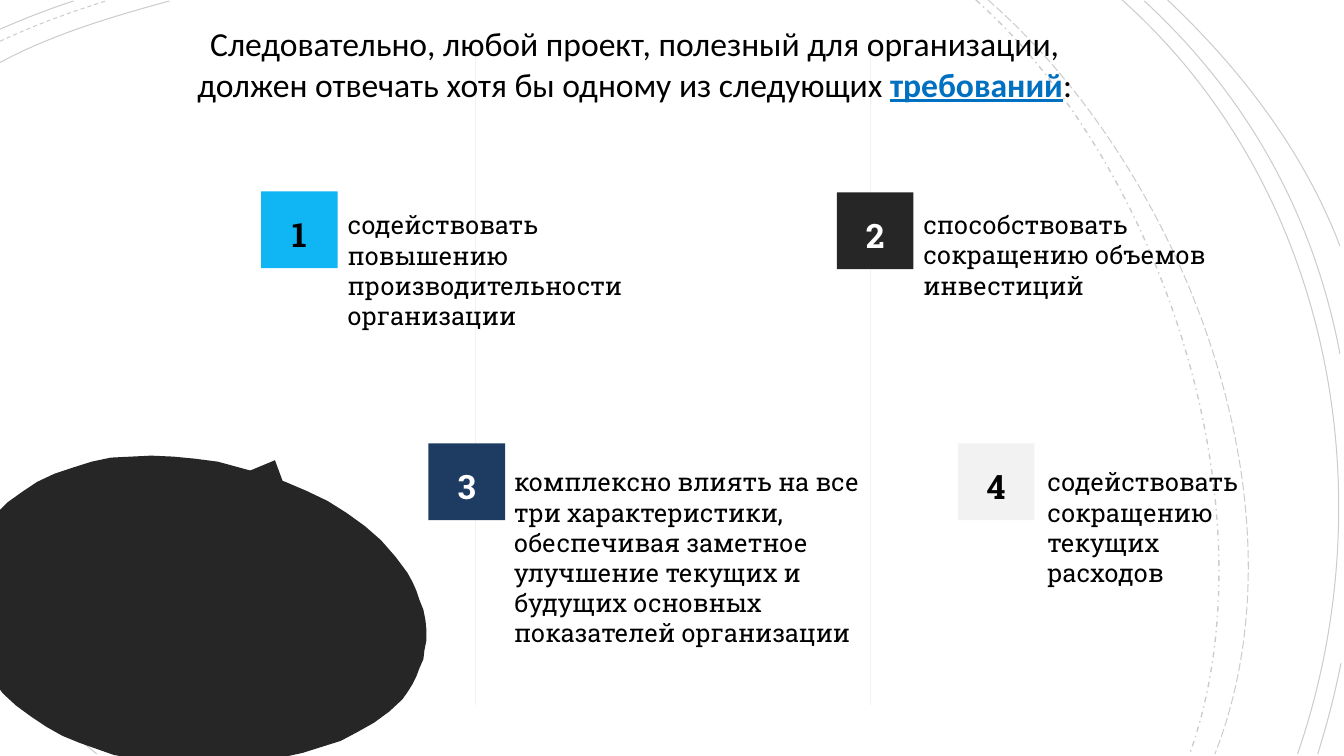
from pptx import Presentation
from pptx.dml.color import RGBColor
from pptx.enum.dml import MSO_LINE
from pptx.enum.shapes import MSO_CONNECTOR, MSO_SHAPE
from pptx.enum.text import MSO_ANCHOR, PP_ALIGN
from pptx.oxml.ns import qn
from pptx.util import Inches, Pt
from lxml.etree import SubElement

BLACK = RGBColor(0x00, 0x00, 0x00)
WHITE = RGBColor(0xFF, 0xFF, 0xFF)
DARK = RGBColor(0x26, 0x26, 0x26)
SKY = RGBColor(0x10, 0xB6, 0xF4)
NAVY = RGBColor(0x1E, 0x3C, 0x62)
PALE = RGBColor(0xF2, 0xF2, 0xF2)
BLUE = RGBColor(0x00, 0x70, 0xC0)

SLAB = "Roboto Slab"
SOLID, DASH = MSO_LINE.SOLID, MSO_LINE.DASH
SIDE = 0.76

ARCS = [
    ((0, 0.62), (0.52, 0.34), (1.13, 0.16), (1.68, 0.01), SOLID, 0.75),
    ((2.1, 7.48), (1.34, 6.9), (0.62, 6.22), (0, 5.48), SOLID, 0.75),
    ((0, 0.41), (0.34, 0.25), (0.7, 0.12), (1.05, 0.01), DASH, 0.75),
    ((1.83, 7.49), (1.18, 6.98), (0.56, 6.4), (0.01, 5.77), DASH, 0.75),
    ((0, 0.29), (0.23, 0.19), (0.48, 0.09), (0.73, 0.01), SOLID, 0.75),
    ((1.67, 7.48), (1.08, 7.01), (0.51, 6.48), (0, 5.91), SOLID, 0.75),
    ((1.49, 7.48), (0.97, 7.04), (0.46, 6.55), (0, 6.03), SOLID, 0.75),
    ((1.3, 7.48), (0.84, 7.09), (0.41, 6.67), (0, 6.23), SOLID, 0.75),
    ((0.96, 7.48), (0.63, 7.21), (0.31, 6.92), (0, 6.62), SOLID, 0.75),
    ((9.68, 0), (11.54, 1.66), (12.65, 5.09), (11.8, 7.48), MSO_LINE.DASH_DOT, 1),
    ((9.8, 0), (11.73, 1.69), (13.02, 4.99), (12.05, 7.48), MSO_LINE.LONG_DASH, 0.75),
    ((11.13, 0), (13.2, 1.85), (13.76, 4.9), (12.87, 7.48), SOLID, 0.75),
    ((11.35, 0.01), (12.38, 0.96), (13.03, 2.14), (13.29, 3.51), SOLID, 0.75),
    ((13.3, 6.58), (13.24, 6.89), (13.16, 7.19), (13.07, 7.48), SOLID, 0.75),
    ((11.58, 0), (12.31, 0.69), (12.93, 1.5), (13.29, 2.44), SOLID, 0.75),
]

BUBBLE = [
    (1.5, 4.52), (1.72, 4.53), (1.93, 4.55), (2.16, 4.58), (2.38, 4.64), (2.6, 4.7),
    (2.83, 4.78), (3.04, 4.87), (3.25, 4.97), (3.44, 5.09), (3.62, 5.22), (3.78, 5.36),
    (3.92, 5.52), (3.98, 5.6), (4.04, 5.68), (4.09, 5.77), (4.13, 5.86), (4.16, 5.95),
    (4.2, 6.05), (4.22, 6.15), (4.23, 6.25), (4.23, 6.35), (4.21, 6.45), (4.2, 6.54),
    (4.16, 6.63), (4.13, 6.71), (4.09, 6.79), (4.04, 6.87), (3.99, 6.94), (3.86, 7.06),
    (3.71, 7.17), (3.55, 7.26), (3.38, 7.35), (3.19, 7.41), (3, 7.47), (2.86, 7.5),
    (1.19, 7.5), (1.13, 7.49), (0.96, 7.43), (0.79, 7.37), (0.62, 7.3), (0.46, 7.21),
    (0.31, 7.11), (0.16, 7), (0.03, 6.88), (0, 6.84), (0, 5.06), (0.08, 4.98),
    (0.22, 4.88), (0.37, 4.78), (0.54, 4.7), (0.72, 4.64), (0.91, 4.58), (1.1, 4.54),
    (1.3, 4.53),
]

ITEMS = [
    (2.59, 1.9, SKY, BLACK, (3.35, 2.03, 3.74, 1.25),
     "содействовать повышению производительности организации"),
    (8.3, 1.91, DARK, WHITE, (9.06, 2.03, 3.74, 0.93),
     "способствовать сокращению объемов инвестиций"),
    (4.25, 4.4, NAVY, WHITE, (5, 4.58, 3.94, 0.5),
     "комплексно влиять на все три характеристики, обеспечивая заметное "
     "улучшение текущих и будущих основных показателей организации"),
    (9.5, 4.4, PALE, BLACK, (10.29, 4.58, 2.38, 0.5),
     "содействовать сокращению текущих расходов"),
]

TITLE = [
    ("Следовательно, любой проект, полезный для организации, "
     "должен отвечать хотя бы одному из следующих ", BLACK, {}),
    ("требований", BLUE, {"bold": True, "underline": True}),
    (":", BLACK, {}),
]


def apply(obj, form):
    """Set each attribute named in a dict of format values."""
    for key, value in form.items():
        setattr(obj, key, value)


def paint(shape, color):
    """Give a shape a plain fill with no line or shadow."""
    shape.shadow.inherit = False
    shape.fill.solid()
    shape.fill.fore_color.rgb = color
    shape.line.fill.background()


def trace(shapes, points, close):
    """Draw an outline through points given in inches."""
    first, *rest = [(Inches(x), Inches(y)) for x, y in points]
    pen = shapes.build_freeform(*first)
    pen.add_line_segments(rest, close=close)
    return pen.convert_to_shape()


def bend(shape):
    """Turn the three straight segments of a shape into one cubic curve."""
    route = shape._element.find(".//" + qn("a:path"))
    cubic = SubElement(route, qn("a:cubicBezTo"))
    for side in route.findall(qn("a:lnTo")):
        cubic.append(side[0])
        route.remove(side)


def add_arc(shapes, arc):
    """Draw one faint arc of the backdrop."""
    *ends, dash, width = arc
    shape = trace(shapes, ends, False)
    bend(shape)
    shape.shadow.inherit = False
    shape.fill.background()
    shape.line.color.rgb = BLACK
    apply(shape.line, {"dash_style": dash, "width": Pt(width)})
    tint = shape.line._ln.find(".//" + qn("a:srgbClr"))
    SubElement(tint, qn("a:alpha"), val="20000")


def add_bubble(shapes):
    """Draw the dark speech bubble and its tip."""
    tip = shapes.add_shape(MSO_SHAPE.ISOSCELES_TRIANGLE, *map(Inches, (1.73, 4.53, 1.65, 0.86)))
    tip.rotation = 23.6
    paint(tip, DARK)
    paint(trace(shapes, BUBBLE, True), DARK)


def add_rule(shapes, x):
    """Draw one thin upright rule."""
    rule = shapes.add_connector(MSO_CONNECTOR.STRAIGHT, *map(Inches, (x, 0.51, x, 6.99)))
    rule.line.color.rgb = PALE
    rule.line.width = Pt(0.25)
    SubElement(rule._element.spPr, qn("a:effectLst"))


def write(frame, runs, font, para):
    """Fill a text frame with one paragraph of runs."""
    frame.word_wrap = True
    line = frame.paragraphs[0]
    apply(line, para)
    for text, color, extra in runs:
        run = line.add_run()
        run.text = text
        apply(run.font, {**font, **extra})
        run.font.color.rgb = color


def add_item(shapes, num, item):
    """Draw a numbered square and the text beside it."""
    left, top, fill, ink, place, text = item
    box = shapes.add_shape(MSO_SHAPE.RECTANGLE, *map(Inches, (left, top, SIDE, SIDE)))
    paint(box, fill)
    box.text_frame.vertical_anchor = MSO_ANCHOR.MIDDLE
    write(box.text_frame, [(str(num), ink, {})],
          {"name": SLAB, "size": Pt(24), "bold": True},
          {"alignment": PP_ALIGN.CENTER, "line_spacing": 1.2, "space_before": Pt(10)})
    note = shapes.add_textbox(*map(Inches, place))
    write(note.text_frame, [(text, BLACK, {})], {"name": SLAB, "size": Pt(18)},
          {"space_before": Pt(10)})


def main():
    """Build the slide and save it."""
    deck = Presentation()
    apply(deck, {"slide_width": Inches(13.33), "slide_height": Inches(7.5)})
    shapes = deck.slides.add_slide(deck.slide_layouts[6]).shapes
    for arc in ARCS:
        add_arc(shapes, arc)
    add_bubble(shapes)
    for x in (4.71, 8.63):
        add_rule(shapes, x)
    for num, item in enumerate(ITEMS, 1):
        add_item(shapes, num, item)
    head = shapes.add_textbox(*map(Inches, (1.5, 0.18, 9.59, 0.91)))
    write(head.text_frame, TITLE, {"name": "Calibri", "size": Pt(24)},
          {"alignment": PP_ALIGN.CENTER})
    deck.save("out.pptx")


if __name__ == "__main__":
    main()
